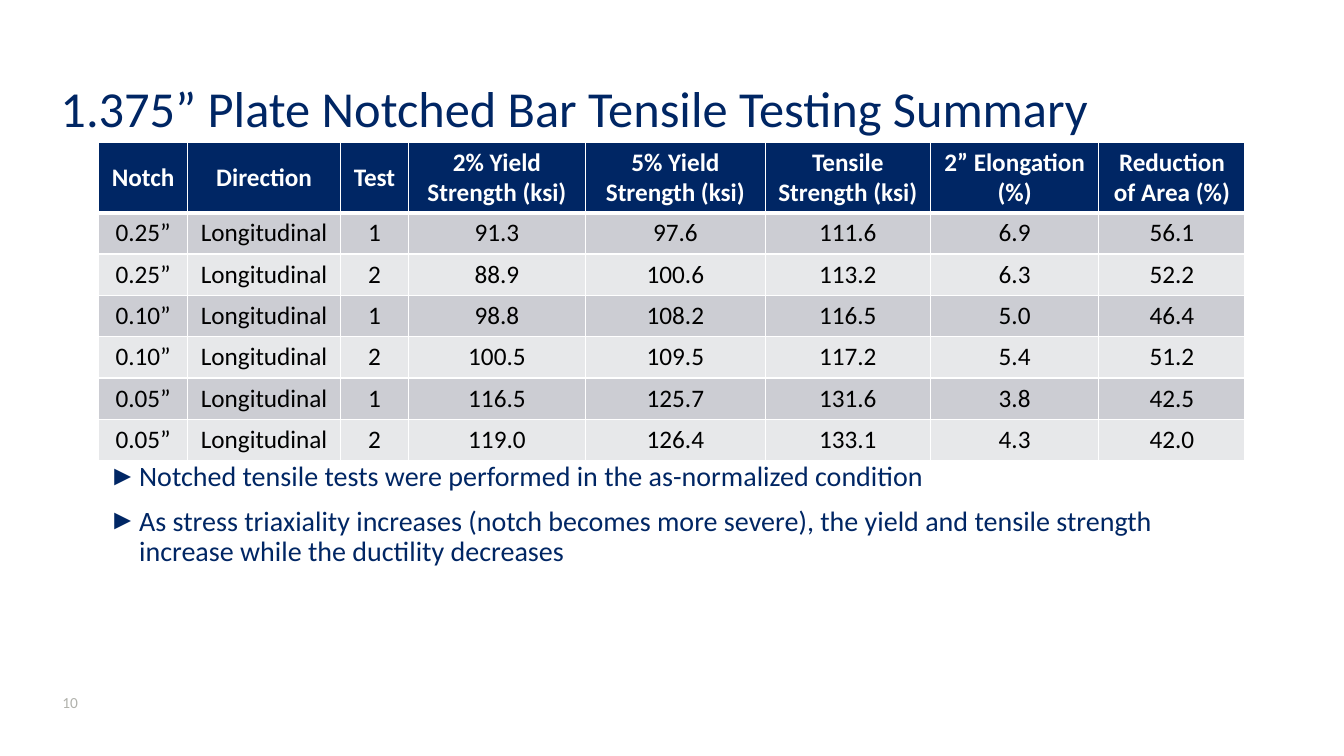
from lxml import etree
from pptx import Presentation
from pptx import util as u
from pptx.dml.color import RGBColor
from pptx.enum import text
from pptx.oxml import ns

NAVY, WHITE, BLACK, GREY = "002664", "FFFFFF", "000000", "B0B1AB"
BANDS = ["CCCDD3", "E7E8EA"]
COLUMN_WIDTHS = [0.88, 1.52, 0.67, 1.76, 1.78, 1.64, 1.67, 1.45]
HEADER_HEIGHT, ROW_HEIGHT = 0.7, 0.41
HEADINGS = ["Notch", "Direction", "Test", "2% Yield Strength (ksi)", "5% Yield Strength (ksi)",
            "Tensile Strength (ksi)", "2” Elongation (%)", "Reduction of Area (%)"]
RESULTS = [
    ["0.25”", "1", "91.3", "97.6", "111.6", "6.9", "56.1"],
    ["0.25”", "2", "88.9", "100.6", "113.2", "6.3", "52.2"],
    ["0.10”", "1", "98.8", "108.2", "116.5", "5.0", "46.4"],
    ["0.10”", "2", "100.5", "109.5", "117.2", "5.4", "51.2"],
    ["0.05”", "1", "116.5", "125.7", "131.6", "3.8", "42.5"],
    ["0.05”", "2", "119.0", "126.4", "133.1", "4.3", "42.0"],
]
FINDINGS = [
    "Notched tensile tests were performed in the as-normalized condition",
    "As stress triaxiality increases (notch becomes more severe), the yield and tensile "
    "strength increase while the ductility decreases",
]


def rgb(value):
    return RGBColor.from_string(value)


def apply(target, formats):
    for name, value in formats.items():
        setattr(target, name, value)


class SummarySlide:
    font = "Calibri"

    def __init__(self, deck):
        self.slide = deck.slides.add_slide(deck.slide_layouts[1])

    def place(self, shape, box):
        apply(shape, dict(zip(("left", "top", "width", "height"), map(u.Inches, box))))

    def add_text(self, paragraph, wording, size, color, bold=False, **formats):
        apply(paragraph, formats)
        run = paragraph.add_run()
        run.text = wording
        apply(run.font, {"name": self.font, "size": u.Pt(size), "bold": bold})
        run.font.color.rgb = rgb(color)

    def title(self, wording, box):
        heading = self.slide.shapes.title
        self.place(heading, box)
        apply(heading.text_frame, {"vertical_anchor": text.MSO_ANCHOR.BOTTOM,
                                   "auto_size": text.MSO_AUTO_SIZE.NONE})
        self.add_text(heading.text_frame.paragraphs[0], wording, 36, NAVY,
                      alignment=text.PP_ALIGN.LEFT, line_spacing=0.8)

    def bullet(self, paragraph):
        properties = paragraph._p.get_or_add_pPr()
        properties.set("marL", str(u.Inches(0.3)))
        properties.set("indent", str(-u.Inches(0.3)))
        color = etree.SubElement(properties, ns.qn("a:buClr"))
        etree.SubElement(color, ns.qn("a:srgbClr"), val=NAVY)
        etree.SubElement(properties, ns.qn("a:buFont"), typeface="Arial")
        etree.SubElement(properties, ns.qn("a:buChar"), char="►")

    def findings(self, items, box):
        body = self.slide.placeholders[1]
        self.place(body, box)
        frame = body.text_frame
        frame.auto_size = text.MSO_AUTO_SIZE.NONE
        for index, item in enumerate(items):
            paragraph = frame.add_paragraph() if index else frame.paragraphs[0]
            self.bullet(paragraph)
            self.add_text(paragraph, item, 20, NAVY, line_spacing=0.9,
                          space_before=u.Pt(10 if index else 0))

    def page_number(self, number, box):
        frame = self.slide.shapes.add_textbox(*map(u.Inches, box)).text_frame
        apply(frame, {"word_wrap": True, "vertical_anchor": text.MSO_ANCHOR.MIDDLE})
        self.add_text(frame.paragraphs[0], number, 11, GREY)

    def borders(self, cell, top, bottom):
        properties = cell._tc.get_or_add_tcPr()
        widths = {"a:lnL": 1, "a:lnR": 1, "a:lnT": top, "a:lnB": bottom}
        for position, (side, width) in enumerate(widths.items()):
            line = etree.Element(ns.qn(side), w=str(u.Pt(width)))
            fill = etree.SubElement(line, ns.qn("a:solidFill"))
            etree.SubElement(fill, ns.qn("a:srgbClr"), val=WHITE)
            properties.insert(position, line)

    def table(self, rows, box):
        table = self.slide.shapes.add_table(len(rows), len(rows[0]), *map(u.Inches, box)).table
        for column, width in zip(table.columns, COLUMN_WIDTHS):
            column.width = u.Inches(width)
        for r, values in enumerate(rows):
            header = r == 0
            table.rows[r].height = u.Inches(HEADER_HEIGHT if header else ROW_HEIGHT)
            for c, value in enumerate(values):
                cell = table.cell(r, c)
                cell.vertical_anchor = text.MSO_ANCHOR.MIDDLE
                cell.fill.solid()
                cell.fill.fore_color.rgb = rgb(NAVY if header else BANDS[(r - 1) % 2])
                self.borders(cell, top=3 if r == 1 else 1, bottom=3 if header else 1)
                self.add_text(cell.text_frame.paragraphs[0], value, 18,
                              WHITE if header else BLACK, bold=header,
                              alignment=text.PP_ALIGN.CENTER)


def main():
    deck = Presentation()
    apply(deck, {"slide_width": u.Inches(13.33), "slide_height": u.Inches(7.5)})
    summary = SummarySlide(deck)
    summary.title("1.375” Plate Notched Bar Tensile Testing Summary", (0.5, 0.35, 12.16, 1.06))
    summary.findings(FINDINGS, (0.98, 4.54, 11.37, 1.14))
    summary.page_number("10", (0.52, 6.82, 0.6, 0.3))
    rows = [HEADINGS] + [[notch, "Longitudinal", *values] for notch, *values in RESULTS]
    summary.table(rows, (0.98, 1.41, 11.37, HEADER_HEIGHT + ROW_HEIGHT * len(RESULTS)))
    deck.save("out.pptx")


if __name__ == "__main__":
    main()
